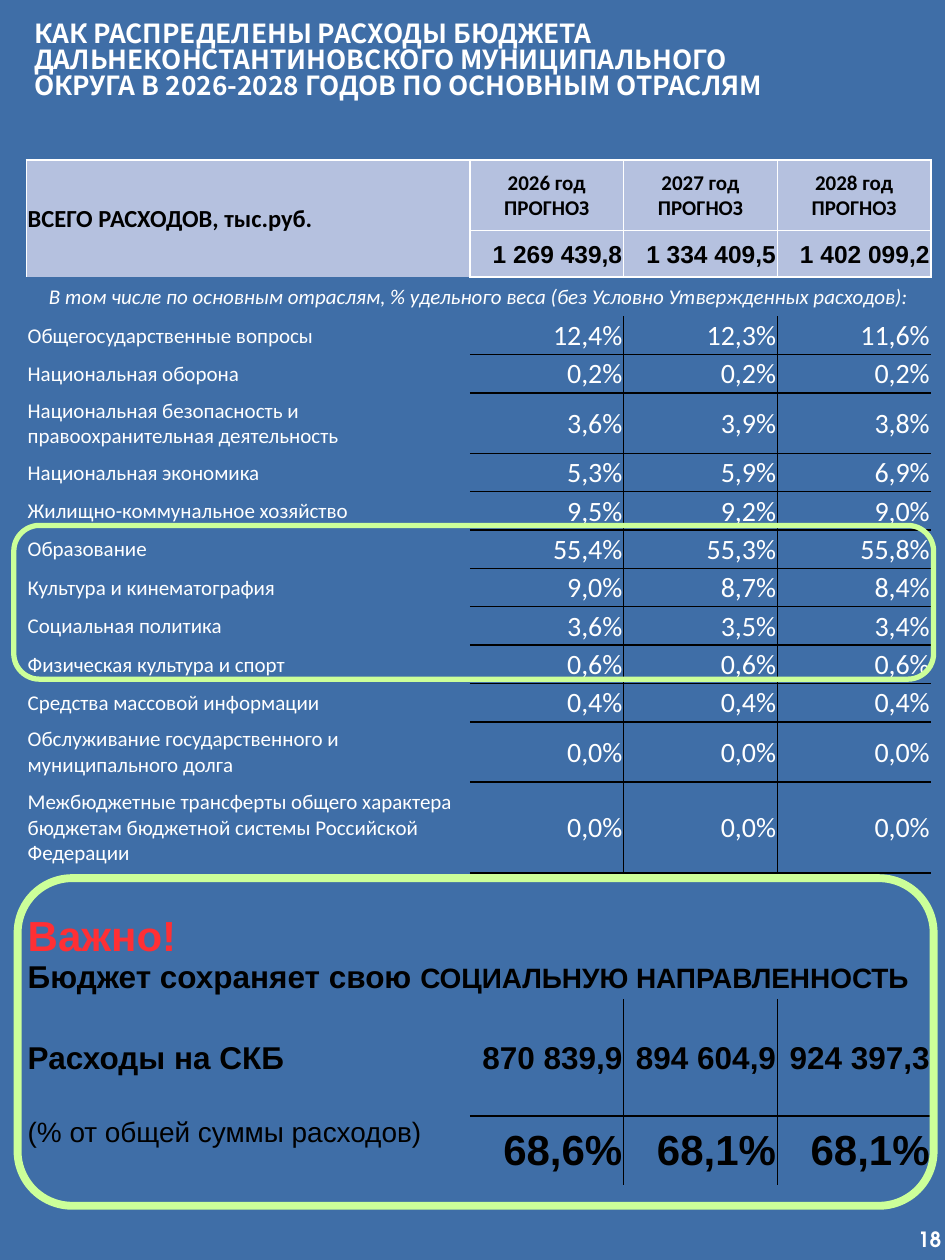
from lxml.etree import SubElement
from pptx import Presentation
from pptx.dml.color import RGBColor
from pptx.enum.shapes import MSO_SHAPE
from pptx.enum.text import MSO_ANCHOR, MSO_AUTO_SIZE, PP_ALIGN
from pptx.oxml.ns import qn
from pptx.util import Inches, Pt

BLUE = RGBColor(0x3F, 0x6E, 0xA7)
LAVENDER = RGBColor(0xB5, 0xC1, 0xDF)
LIME = RGBColor(0xCC, 0xFF, 0x99)
RED = RGBColor(0xFF, 0x2F, 0x34)
WHITE = RGBColor(0xFF, 0xFF, 0xFF)
BLACK = RGBColor(0, 0, 0)
NO_GRID_STYLE = "{2D5ABB26-0587-4C30-8999-92F81FD0307C}"

TITLE = ("КАК РАСПРЕДЕЛЕНЫ РАСХОДЫ БЮДЖЕТА ДАЛЬНЕКОНСТАНТИНОВСКОГО МУНИЦИПАЛЬНОГО "
         "ОКРУГА В 2026-2028 ГОДОВ ПО ОСНОВНЫМ ОТРАСЛЯМ")
YEARS = ["2026 год ПРОГНОЗ", "2027 год ПРОГНОЗ", "2028 год ПРОГНОЗ"]
TOTALS = ["1 269 439,8", "1 334 409,5", "1 402 099,2"]
CAPTION = "В том числе по основным отраслям, % удельного веса (без Условно Утвержденных расходов):"
SECTORS = [
    ("Общегосударственные вопросы", ["12,4%", "12,3%", "11,6%"]),
    ("Национальная оборона", ["0,2%", "0,2%", "0,2%"]),
    ("Национальная безопасность и правоохранительная деятельность", ["3,6%", "3,9%", "3,8%"]),
    ("Национальная экономика", ["5,3%", "5,9%", "6,9%"]),
    ("Жилищно-коммунальное хозяйство", ["9,5%", "9,2%", "9,0%"]),
    ("Образование", ["55,4%", "55,3%", "55,8%"]),
    ("Культура и кинематография", ["9,0%", "8,7%", "8,4%"]),
    ("Социальная политика", ["3,6%", "3,5%", "3,4%"]),
    ("Физическая культура и спорт", ["0,6%", "0,6%", "0,6%"]),
    ("Средства массовой информации", ["0,4%", "0,4%", "0,4%"]),
    ("Обслуживание государственного и муниципального долга", ["0,0%", "0,0%", "0,0%"]),
    ("Межбюджетные трансферты общего характера бюджетам бюджетной системы Российской Федерации",
     ["0,0%", "0,0%", "0,0%"]),
]
SOCIAL_SPENDING = ["870 839,9", "894 604,9", "924 397,3"]
SOCIAL_SHARES = ["68,6%", "68,1%", "68,1%"]

TABLE_HEIGHT = 8.14
COLUMN_WIDTHS = [3.52, 1.22, 1.22, 1.22]
SPECIAL_ROWS = {0: 0.56, 1: 0.37, 2: 0.31, 5: 0.48, 13: 0.48, 14: 0.72,
                15: 0.28, 16: 0.72, 17: 0.93, 18: 0.55}
ROW_COUNT = 19
FIRST_SECTOR, BLANK_ROW, NOTE_ROW, SPENDING_ROW, SHARE_ROW = 3, 15, 16, 17, 18


def write(para, text, size=12, font="Calibri", color=WHITE, bold=False, italic=False,
          align=PP_ALIGN.LEFT):
    para.alignment = align
    span = para.add_run()
    span.text = text
    span.font.size = Pt(size)
    span.font.name = font
    span.font.color.rgb = color
    span.font.bold = bold
    span.font.italic = italic


def add_title(page):
    box = page.shapes.title
    box.left, box.top, box.width, box.height = (Inches(n) for n in (0.1, 0.13, 6.22, 1.11))
    frame = box.text_frame
    frame.word_wrap = True
    frame.auto_size = MSO_AUTO_SIZE.SHAPE_TO_FIT_TEXT
    frame.vertical_anchor = MSO_ANCHOR.TOP
    para = frame.paragraphs[0]
    para.line_spacing = 0.83
    para._p.get_or_add_pPr().set("marL", str(Inches(0.07)))
    write(para, TITLE, size=15, font="Noto Sans CJK SC", bold=True)


def add_page_number(page):
    box = page.shapes.add_textbox(Inches(5.72), Inches(9.57), Inches(1.75), Inches(0.53))
    frame = box.text_frame
    frame.word_wrap = True
    frame.vertical_anchor = MSO_ANCHOR.MIDDLE
    frame.margin_left = frame.margin_top = frame.margin_right = frame.margin_bottom = 0
    write(frame.paragraphs[0], "18", font="TeX Gyre Adventor", bold=True, align=PP_ALIGN.RIGHT)


def draw_borders(cell, edges, color):
    properties = cell._tc.get_or_add_tcPr()
    for edge in "LRTB":
        if edge in edges:
            line = SubElement(properties, qn(f"a:ln{edge}"), w=str(Pt(1)))
            fill = SubElement(line, qn("a:solidFill"))
            SubElement(fill, qn("a:srgbClr"), val=str(color))


def fill_cell(cell, text, edges="", edge_color=BLACK, fill=None, **style):
    draw_borders(cell, edges, edge_color)
    if fill is not None:
        cell.fill.solid()
        cell.fill.fore_color.rgb = fill
    write(cell.text_frame.paragraphs[0], text, **style)


def add_header(table):
    head = {"edge_color": WHITE, "fill": LAVENDER, "color": BLACK, "bold": True}
    table.cell(0, 0).merge(table.cell(1, 0))
    fill_cell(table.cell(0, 0), "ВСЕГО РАСХОДОВ, тыс.руб.", edges="LTR", size=14, **head)
    for column, (year, total) in enumerate(zip(YEARS, TOTALS), 1):
        fill_cell(table.cell(0, column), year, edges="LTRB", align=PP_ALIGN.CENTER, **head)
        fill_cell(table.cell(1, column), total, edges="LTR", size=14, font="Arial",
                  align=PP_ALIGN.RIGHT, **head)
    table.cell(2, 0).merge(table.cell(2, 3))
    fill_cell(table.cell(2, 0), CAPTION, italic=True, align=PP_ALIGN.CENTER)


def add_values(table, row, values, first=False, last=False, **style):
    for column, value in enumerate(values, 1):
        edges = ("" if first else "T") + ("" if last else "B")
        edges += ("L" if column > 1 else "") + ("R" if column < len(values) else "")
        fill_cell(table.cell(row, column), value, edges=edges, align=PP_ALIGN.RIGHT, **style)


def add_sectors(table):
    for index, (name, shares) in enumerate(SECTORS):
        row = FIRST_SECTOR + index
        fill_cell(table.cell(row, 0), name)
        add_values(table, row, shares, first=index == 0, last=index == len(SECTORS) - 1, size=16)


def add_social_block(table):
    strong = {"font": "Arial", "color": BLACK, "bold": True}
    for column in range(len(COLUMN_WIDTHS)):
        para = table.cell(BLANK_ROW, column).text_frame.paragraphs[0]
        SubElement(para._p, qn("a:endParaRPr"), sz="1200")
    note = table.cell(NOTE_ROW, 0)
    note.merge(table.cell(NOTE_ROW, 3))
    fill_cell(note, "Важно!", size=24, font="Arial", color=RED, bold=True)
    para = note.text_frame.add_paragraph()
    write(para, "Бюджет сохраняет свою ", size=18, **strong)
    write(para, "СОЦИАЛЬНУЮ НАПРАВЛЕННОСТЬ", size=16, **strong)
    fill_cell(table.cell(SPENDING_ROW, 0), "Расходы на СКБ", size=18, **strong)
    add_values(table, SPENDING_ROW, SOCIAL_SPENDING, first=True, size=18, **strong)
    share_label = table.cell(SHARE_ROW, 0)
    fill_cell(share_label, "(% от общей суммы расходов)", size=16, font="Arial", color=BLACK)
    share_label.vertical_anchor = MSO_ANCHOR.TOP
    add_values(table, SHARE_ROW, SOCIAL_SHARES, last=True, size=24, **strong)


def add_budget_table(page):
    frame = page.shapes.add_table(ROW_COUNT, len(COLUMN_WIDTHS), Inches(0.21), Inches(1.27),
                                  Inches(sum(COLUMN_WIDTHS)), Inches(TABLE_HEIGHT))
    table = frame.table
    table.first_row = table.horz_banding = False
    table._tbl.tblPr.find(qn("a:tableStyleId")).text = NO_GRID_STYLE
    for column, width in zip(table.columns, COLUMN_WIDTHS):
        column.width = Inches(width)
    plain = (TABLE_HEIGHT - sum(SPECIAL_ROWS.values())) / (ROW_COUNT - len(SPECIAL_ROWS))
    for index, row in enumerate(table.rows):
        row.height = Inches(SPECIAL_ROWS.get(index, plain))
    for cell in table.iter_cells():
        cell.margin_left = cell.margin_top = cell.margin_right = Inches(0.01)
        cell.margin_bottom = 0
        cell.vertical_anchor = MSO_ANCHOR.MIDDLE
    add_header(table)
    add_sectors(table)
    add_social_block(table)


def add_highlight(page, left, top, width, height, weight):
    ring = page.shapes.add_shape(MSO_SHAPE.ROUNDED_RECTANGLE, Inches(left), Inches(top),
                                 Inches(width), Inches(height))
    ring.shadow.inherit = False
    ring.fill.background()
    ring.line.color.rgb = LIME
    ring.line.width = Pt(weight)


def main():
    deck = Presentation()
    deck.slide_width, deck.slide_height = Inches(7.5), Inches(10)
    page = deck.slides.add_slide(deck.slide_layouts[5])
    page.background.fill.solid()
    page.background.fill.fore_color.rgb = BLUE
    add_page_number(page)
    add_title(page)
    add_budget_table(page)
    add_highlight(page, 0.11, 4.17, 7.3, 1.22, weight=3)
    add_highlight(page, 0.14, 6.97, 7.27, 2.6, weight=4.5)
    deck.save("out.pptx")


if __name__ == "__main__":
    main()
